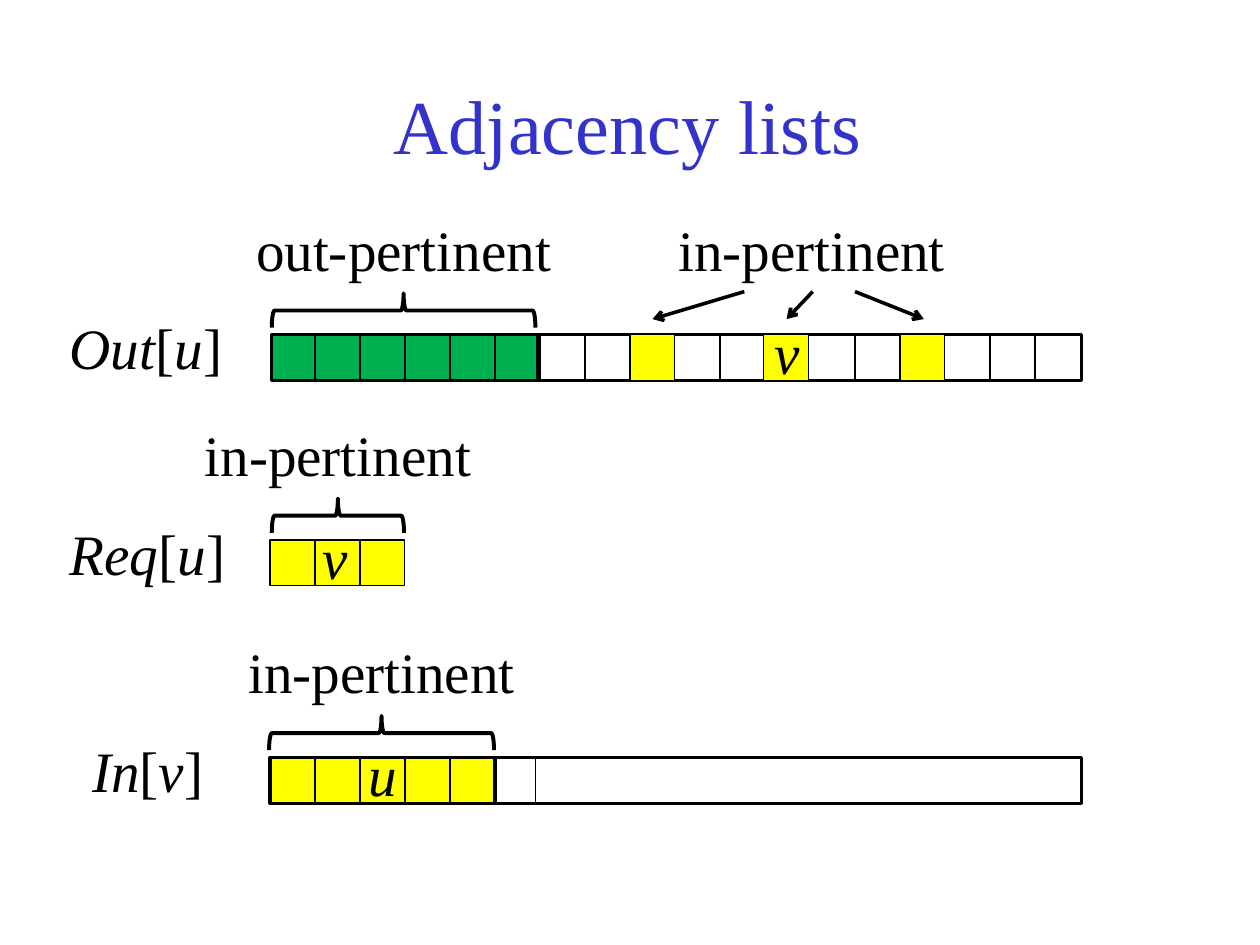
from lxml import etree
from pptx import Presentation
from pptx import util as u
from pptx.dml.color import RGBColor
from pptx.enum import shapes, text
from pptx.oxml.ns import qn

BLACK = RGBColor(0x00, 0x00, 0x00)
BLUE = RGBColor(0x33, 0x33, 0xCC)
GREEN = RGBColor(0x00, 0xB0, 0x50)
YELLOW = RGBColor(0xFF, 0xFF, 0x00)
COLUMNS, ROWS = 28, 21
BAR_HEIGHT, LABEL_HEIGHT, BRACE_HEIGHT = 1.02, 1.68, 0.76
BRACE_RISE, CAPTION_RISE, NAME_RISE, LETTER_RISE = 0.54, 2.67, 0.48, 0.38
THIN, BAR_LINE, ARROW_LINE, BRACE_LINE = 0.75, 2, 2.25, 2.5
TITLE = "Adjacency lists"

LISTS = [
    {"name": ("Out", "u"), "left": 1.3, "top": 7.44,
     "bars": [(6.04, 11.98, GREEN), (11.94, 24.03, None)],
     "cells": [14, 16.97, 20], "dividers": [7, 8, 9, 10, 11, 13, 16, 19, 22, 23],
     "brace": (6.04, 11.9), "caption": "out-pertinent", "letter": ("v", 17.5)},
    {"name": ("Req", "u"), "left": 1.3, "top": 12,
     "bars": [], "cells": [6, 7, 8], "dividers": [],
     "brace": (6.04, 8.98), "caption": "in-pertinent", "letter": ("v", 7.45)},
    {"name": ("In", "v"), "left": 1.8, "top": 16.83,
     "bars": [(11, 24.03, None), (6, 11, YELLOW)],
     "cells": [], "dividers": [7, 8, 9, 10, 11.9],
     "brace": (5.98, 10.98), "caption": "in-pertinent", "letter": ("u", 8.5)},
]
ARROW_CAPTION = ("in-pertinent", 18.04)
ARROW_ROWS = (6.48, 7.09)
ARROWS = [(16.54, 14.5), (18.06, 17.48), (19, 20.53)]


def area(*cells):
    """Turn grid columns and rows, one centimetre each, into lengths."""
    return [u.Cm(cell) for cell in cells]


def add_outline(page, kind, place, fill, weight):
    """Add a preset shape with a black line."""
    shape = page.shapes.add_shape(kind, *place)
    shape.shadow.inherit = False
    if fill is None:
        shape.fill.background()
    else:
        shape.fill.solid()
        shape.fill.fore_color.rgb = fill
    shape.line.color.rgb = BLACK
    shape.line.width = u.Pt(weight)
    return shape


def add_line(page, start, end, weight, arrow=False):
    """Add a straight line between two grid points."""
    points = area(*start, *end)
    line = page.shapes.add_connector(shapes.MSO_CONNECTOR.STRAIGHT, *points)
    line.line.color.rgb = BLACK
    line.line.width = u.Pt(weight)
    properties = line._element.spPr
    if arrow:
        tail = etree.SubElement(properties.find(qn("a:ln")), qn("a:tailEnd"))
        tail.set("type", "arrow")
    etree.SubElement(properties, qn("a:effectLst"))


def add_label(page, place, spans, align, size=36, color=BLACK, **frame_format):
    """Add a text box of upright and italic spans."""
    frame = page.shapes.add_textbox(*place).text_frame
    settings = {"word_wrap": True,
                "auto_size": text.MSO_AUTO_SIZE.SHAPE_TO_FIT_TEXT, **frame_format}
    for key, value in settings.items():
        setattr(frame, key, value)
    para = frame.paragraphs[0]
    para.alignment, para.line_spacing = align, 0.93
    for words, italic in spans:
        span = para.add_run()
        span.text = words
        font = {"name": "Times New Roman", "size": u.Pt(size), "italic": italic}
        for key, value in font.items():
            setattr(span.font, key, value)
        span.font.color.rgb = color


def add_centred(page, words, center, top, width, italic=False):
    """Add a label centred on a grid column."""
    place = area(center - width / 2, top, width, LABEL_HEIGHT)
    add_label(page, place, [(words, italic)], text.PP_ALIGN.CENTER)


def add_brace(page, start, end, bar_top):
    """Add a brace that opens down over a span of columns."""
    span = end - start
    left = (start + end - BRACE_HEIGHT) / 2
    top = bar_top - BRACE_RISE - span / 2
    place = area(left, top, BRACE_HEIGHT, span)
    brace = add_outline(page, shapes.MSO_SHAPE.RIGHT_BRACE, place, None, BRACE_LINE)
    brace.rotation = 270


def add_list(page, row):
    """Draw one adjacency list with its labels."""
    top = row["top"]
    box = shapes.MSO_SHAPE.RECTANGLE
    for start, end, fill in row["bars"]:
        add_outline(page, box, area(start, top, end - start, BAR_HEIGHT), fill, BAR_LINE)
    for column in row["cells"]:
        add_outline(page, box, area(column, top, 1, BAR_HEIGHT), YELLOW, THIN)
    for column in row["dividers"]:
        add_line(page, (column, top), (column, top + BAR_HEIGHT), THIN)
    start, end = row["brace"]
    add_brace(page, start, end, top)
    add_centred(page, row["caption"], (start + end) / 2, top - CAPTION_RISE, 10)
    name, index = row["name"]
    add_label(page, area(row["left"], top - NAME_RISE, 4, LABEL_HEIGHT),
              [(name, True), ("[", False), (index, True), ("]", False)],
              text.PP_ALIGN.LEFT)
    letter, center = row["letter"]
    add_centred(page, letter, center, top - LETTER_RISE, 2, italic=True)


def main():
    """Build the slide and save it."""
    deck = Presentation()
    deck.slide_width, deck.slide_height = area(COLUMNS, ROWS)
    page = deck.slides.add_slide(deck.slide_layouts[6])
    margins = {f"margin_{side}": 0 for side in ("left", "top", "right", "bottom")}
    add_label(page, area(-0.05, 1.91, COLUMNS, 1.9), [(TITLE, False)],
              text.PP_ALIGN.CENTER, 48, BLUE,
              vertical_anchor=text.MSO_ANCHOR.MIDDLE, **margins)
    for row in LISTS:
        add_list(page, row)
    words, center = ARROW_CAPTION
    add_centred(page, words, center, LISTS[0]["top"] - CAPTION_RISE, 10)
    for start, end in ARROWS:
        add_line(page, (start, ARROW_ROWS[0]), (end, ARROW_ROWS[1]), ARROW_LINE, arrow=True)
    deck.save("out.pptx")


if __name__ == "__main__":
    main()
